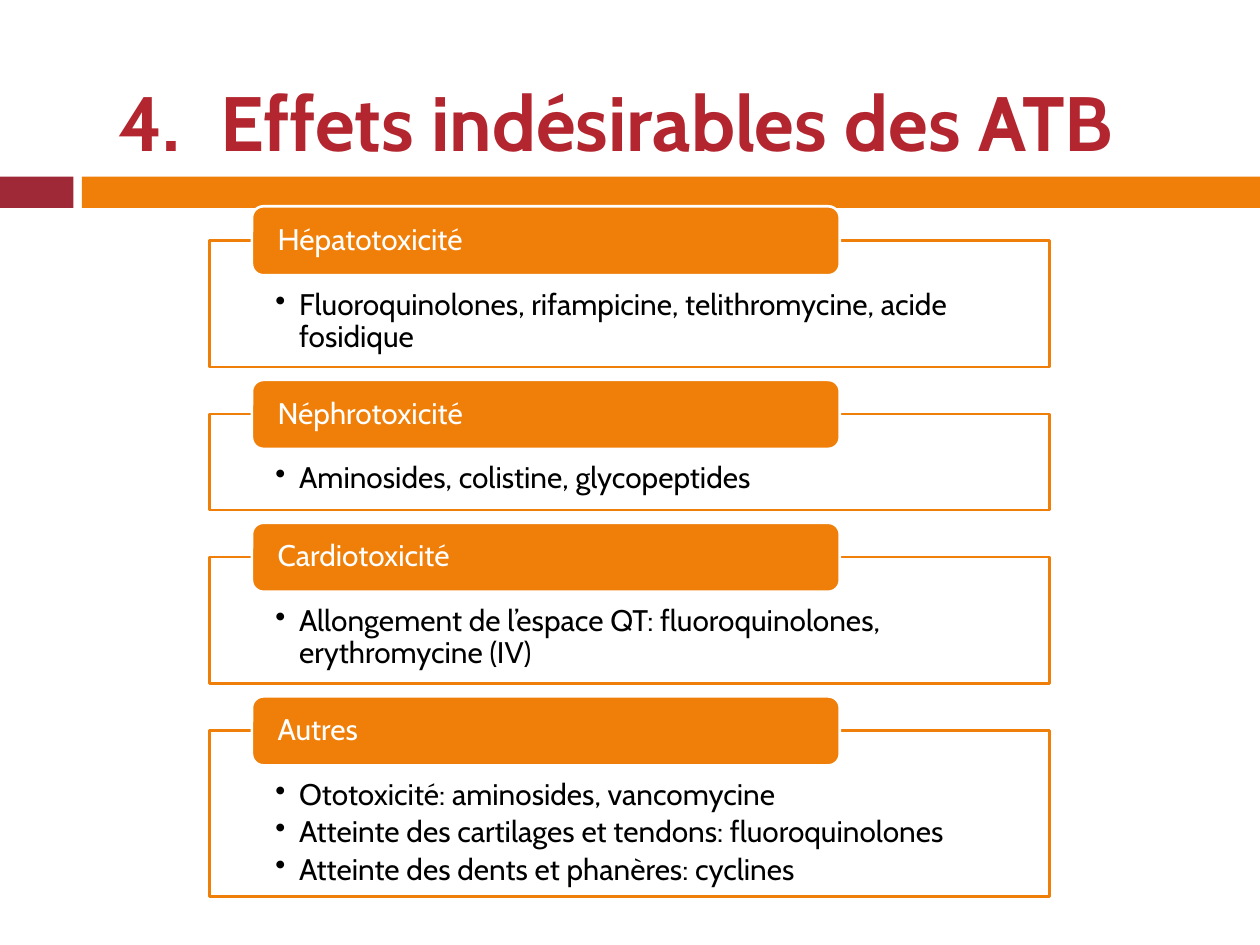
import lxml.etree
import pptx
import pptx.dml.color
import pptx.enum.shapes
import pptx.enum.text
import pptx.oxml.ns
import pptx.util
from pptx.util import Cm, Pt

FONT = "Cabin"
COLORS = {
    "orange": "F07F09",
    "crimson": "9F2936",
    "title": "B3262F",
    "white": "FFFFFF",
    "black": "000000",
}
SHAPES = pptx.enum.shapes.MSO_SHAPE
ANCHOR = pptx.enum.text.MSO_ANCHOR
ALIGN = pptx.enum.text.PP_ALIGN

# Heading, body height in cm, bullets
SECTIONS = [
    ("Hépatotoxicité", 2.55,
     ["Fluoroquinolones, rifampicine, telithromycine, acide fosidique"]),
    ("Néphrotoxicité", 1.93, ["Aminosides, colistine, glycopeptides"]),
    ("Cardiotoxicité", 2.55,
     ["Allongement de l’espace QT: fluoroquinolones, erythromycine (IV)"]),
    ("Autres", 3.35,
     ["Ototoxicité: aminosides, vancomycine",
      "Atteinte des cartilages et tendons: fluoroquinolones",
      "Atteinte des dents et phanères: cyclines"]),
]
FIRST_TOP = 4.85
SECTION_GAP = 0.95
TAB_RISE = 0.69


def rgb(name):
    return pptx.dml.color.RGBColor.from_string(COLORS[name])


def add_box(slide, kind, left, top, width, height, fill, line=None):
    shape = slide.shapes.add_shape(kind, Cm(left), Cm(top), Cm(width), Cm(height))
    shape.shadow.inherit = False
    shape.fill.solid()
    shape.fill.fore_color.rgb = rgb(fill)
    if line:
        shape.line.color.rgb = rgb(line)
        shape.line.width = Pt(1.5)
    else:
        shape.line.fill.background()
    return shape


def set_text(shape, lines, size, color, anchor, insets, bold=False):
    frame = shape.text_frame
    frame.word_wrap = True
    frame.vertical_anchor = anchor
    (frame.margin_left, frame.margin_top,
     frame.margin_right, frame.margin_bottom) = map(Cm, insets)
    frame.text = "\n".join(lines)
    for paragraph in frame.paragraphs:
        paragraph.alignment = ALIGN.LEFT
        for run in paragraph.runs:
            run.font.name = FONT
            run.font.size = Pt(size)
            run.font.bold = bold
            run.font.color.rgb = rgb(color)
    return frame.paragraphs


def add_marker(paragraph, hanging, tag, **attributes):
    properties = paragraph._p.get_or_add_pPr()
    properties.set("marL", str(Cm(hanging)))
    properties.set("indent", str(-Cm(hanging)))
    lxml.etree.SubElement(properties, pptx.oxml.ns.qn(tag), attributes)


def add_title(slide, text):
    box = slide.shapes.add_textbox(Cm(2.13), Cm(1.07), Cm(22.66), Cm(2.74))
    paragraphs = set_text(box, [text], 44, "title", ANCHOR.MIDDLE,
                          (0.25, 0.13, 0.25, 0.13), bold=True)
    add_marker(paragraphs[0], 2.06, "a:buAutoNum", type="arabicPeriod", startAt="4")


def add_section(slide, top, heading, height, bullets):
    # Outlined body with bullets
    body = add_box(slide, SHAPES.RECTANGLE, 4.23, top, 16.93, height, "white", "orange")
    for paragraph in set_text(body, bullets, 17, "black", ANCHOR.TOP,
                              (1.32, 0.99, 1.32, 0.33)):
        paragraph.level = 1
        paragraph.line_spacing = 0.9
        paragraph.space_after = Pt(3)
        add_marker(paragraph, 0.48, "a:buChar", char="•")

    # Heading tab over the top edge
    tab = add_box(slide, SHAPES.ROUNDED_RECTANGLE, 5.08, top - TAB_RISE, 11.85, 1.39,
                  "orange", "white")
    for paragraph in set_text(tab, [heading], 17, "white", ANCHOR.MIDDLE,
                              (0.45, 0, 0.45, 0)):
        paragraph.line_spacing = 0.9


def main():
    presentation = pptx.Presentation()
    presentation.slide_width = Cm(25.4)
    presentation.slide_height = Cm(19.05)
    slide = presentation.slides.add_slide(presentation.slide_layouts[6])

    # Band under the title
    add_box(slide, SHAPES.RECTANGLE, 0, 3.56, 1.48, 0.63, "crimson")
    add_box(slide, SHAPES.RECTANGLE, 1.65, 3.56, 23.75, 0.63, "orange")

    # Stacked sections
    top = FIRST_TOP
    for heading, height, bullets in SECTIONS:
        add_section(slide, top, heading, height, bullets)
        top += height + SECTION_GAP

    add_title(slide, "Effets indésirables des ATB")
    presentation.save("out.pptx")


if __name__ == "__main__":
    main()
